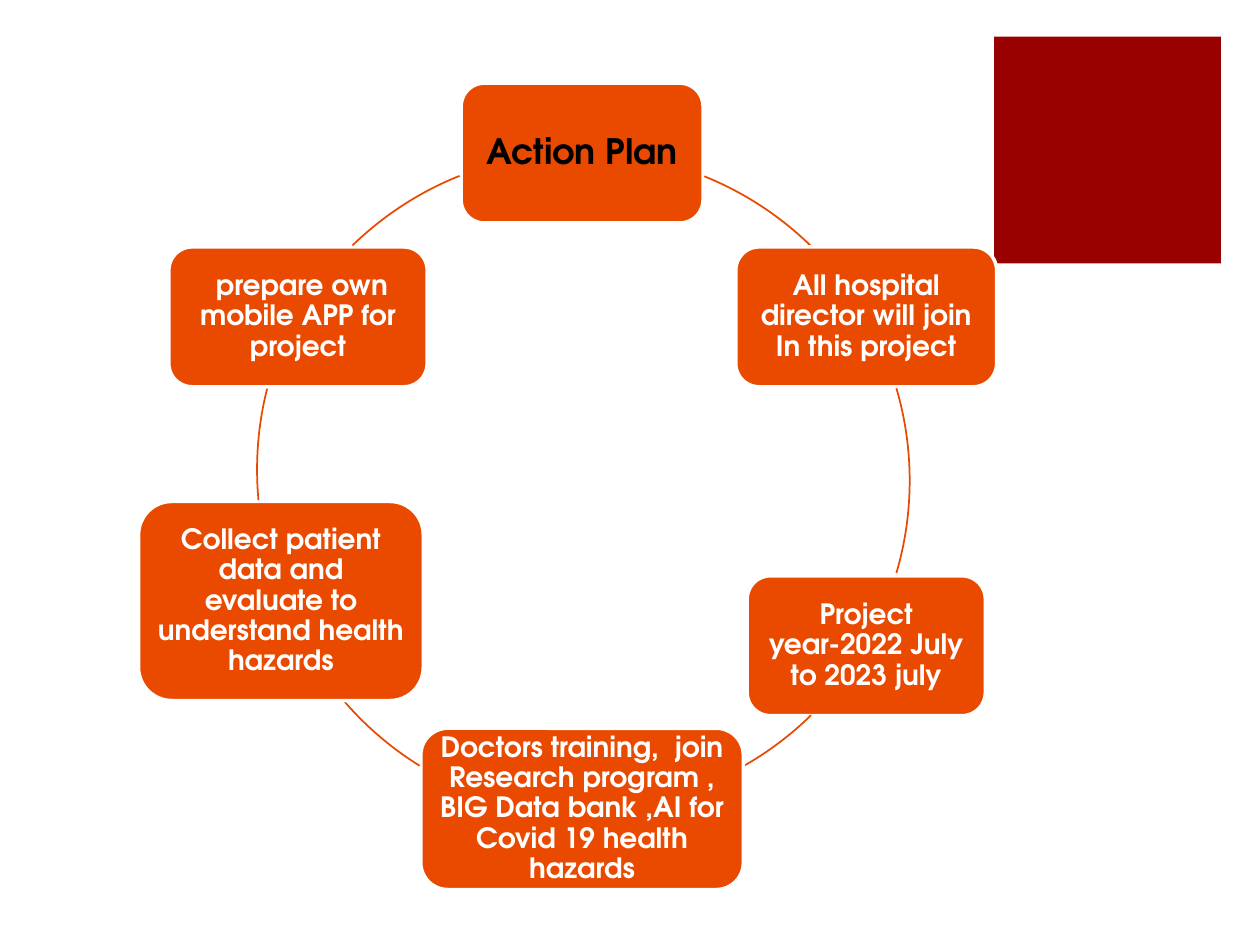
from math import atan2, degrees
from pptx import Presentation
from pptx.dml.color import RGBColor
from pptx.enum.shapes import MSO_SHAPE as Shape
from pptx.enum.text import MSO_ANCHOR as Anchor, PP_ALIGN as Align
from pptx.util import Inches, Pt

ORANGE = RGBColor(0xE9, 0x4A, 0x00)
DARK_RED = RGBColor(0x99, 0x00, 0x00)
WHITE = RGBColor(0xFF, 0xFF, 0xFF)
BLACK = RGBColor(0x00, 0x00, 0x00)
FONT = "TeX Gyre Adventor"
RING = 5.21  # diameter of the cycle

# Steps clockwise: text, left, top, width, height
STEPS = [
    ("Action Plan", 3.66, 0.66, 1.92, 1.11),
    ("All hospital director will join In this project", 5.84, 1.96, 2.07, 1.11),
    ("Project year-2022 July to 2023 july", 5.93, 4.57, 1.89, 1.11),
    ("Doctors training,  join Research program , BIG Data bank ,AI for Covid 19 health hazards",
     3.34, 5.78, 2.56, 1.28),
    ("Collect patient data and evaluate to understand health hazards", 1.10, 3.98, 2.26, 1.58),
    (" prepare own mobile APP for project", 1.34, 1.96, 2.05, 1.11),
]

# Arcs clockwise: ring left and top, start point, end point
ARCS = [
    (2.01, 1.21, (5.59, 1.40), (6.44, 1.95)),
    (2.01, 1.21, (7.12, 3.08), (7.12, 4.55)),
    (2.01, 1.21, (6.44, 5.68), (5.90, 6.08)),
    (2.10, 1.26, (3.33, 6.08), (2.73, 5.57)),
    (2.04, 1.12, (2.05, 3.97), (2.12, 3.08)),
    (2.01, 1.21, (2.80, 1.95), (3.65, 1.40)),
]

deck = Presentation()
deck.slide_width, deck.slide_height = Inches(10), Inches(7.5)
page = deck.slides.add_slide(deck.slide_layouts[6])


def add_box(kind, left, top, width, height):
    box = page.shapes.add_shape(kind, Inches(left), Inches(top), Inches(width), Inches(height))
    box.shadow.inherit = False
    return box


# Corner square
square = add_box(Shape.RECTANGLE, 7.89, 0.29, 1.8, 1.8)
square.fill.solid()
square.fill.fore_color.rgb = DARK_RED
square.line.fill.background()

# Cycle: each step followed by the arc to the next one
for index, ((text, *place), (left, top, start, end)) in enumerate(zip(STEPS, ARCS)):
    is_title = index == 0
    size = 20 if is_title else 16
    step = add_box(Shape.ROUNDED_RECTANGLE, *place)
    step.fill.solid()
    step.fill.fore_color.rgb = ORANGE
    step.line.color.rgb = WHITE
    step.line.width = Pt(2)

    frame = step.text_frame
    frame.word_wrap = True
    frame.vertical_anchor = Anchor.MIDDLE
    inset = Inches(0.08 if is_title else 0.07)
    frame.margin_left = frame.margin_right = frame.margin_top = frame.margin_bottom = inset
    para = frame.paragraphs[0]
    para.alignment = Align.CENTER
    para.line_spacing = 0.9
    para.space_after = Pt(0.35 * size)
    span = para.add_run()
    span.text = text
    span.font.name = FONT
    span.font.size = Pt(size)
    span.font.bold = True
    span.font.color.rgb = BLACK if is_title else WHITE

    arc = add_box(Shape.ARC, left, top, RING, RING)
    arc.fill.background()
    arc.line.color.rgb = ORANGE
    arc.line.width = Pt(1)
    for number, (x, y) in enumerate((start, end)):
        angle = degrees(atan2(y - top - RING / 2, x - left - RING / 2)) % 360
        arc.adjustments[number] = angle * 0.6  # 60000ths of a degree over 100000

deck.save("out.pptx")
